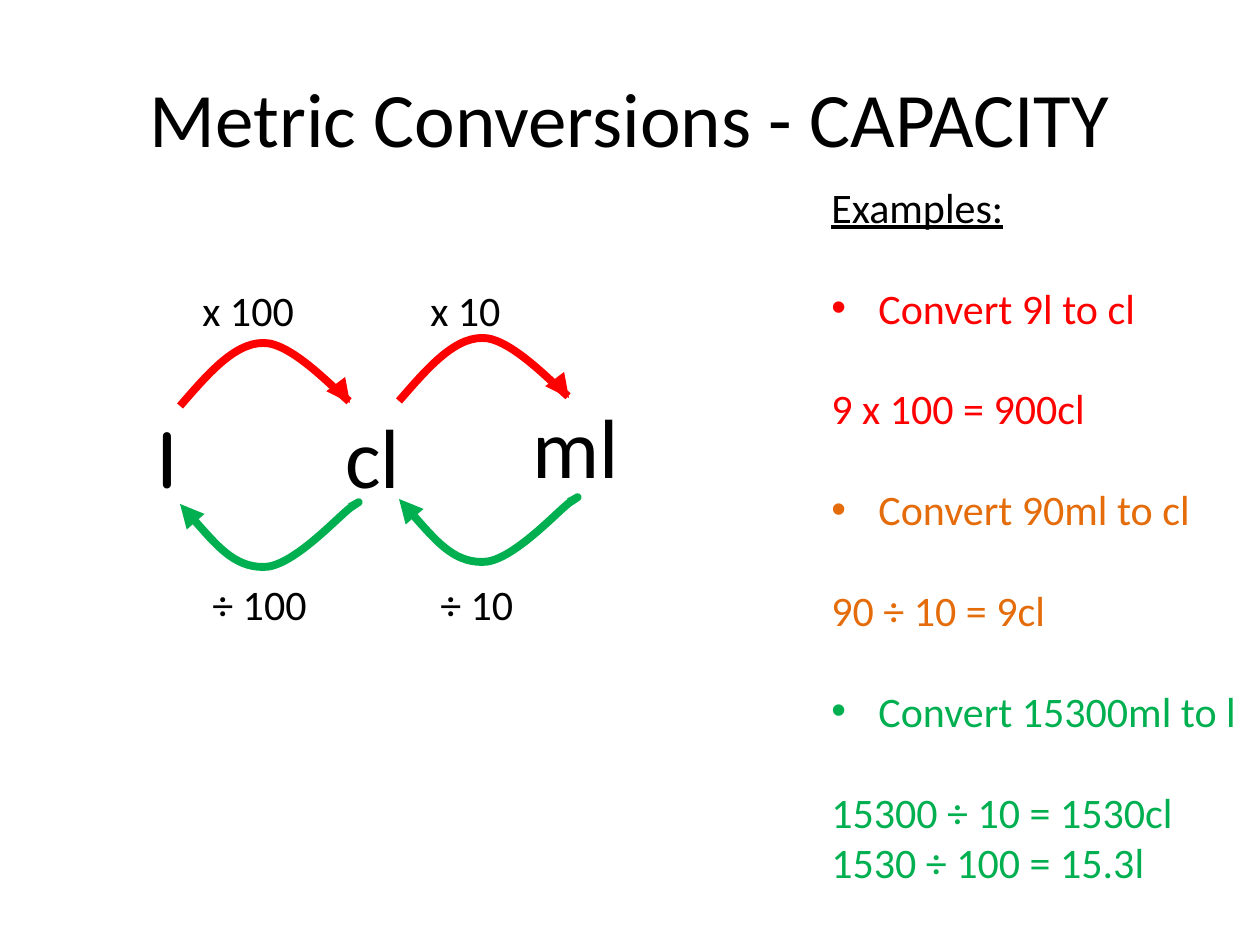
from pptx import Presentation
from pptx.dml.color import RGBColor
from pptx.enum.text import MSO_ANCHOR, PP_ALIGN
from pptx.oxml.ns import qn
from pptx.util import Pt
from lxml import etree

PX = 914400 / 126
CENTER, MIDDLE = PP_ALIGN.CENTER, MSO_ANCHOR.MIDDLE
COLORS = {"black": "000000", "red": "FF0000", "orange": "E46C0A", "green": "00B050"}

# Three joined Bezier curves, as offsets from the start of an arc
ARC = [(27, -31), (54, -63), (83, -63), (111, -64), (156, -15),
       (170, -4), (185, 6), (178, 1), (170, -3)]

EXAMPLES = [  # text, colour, bulleted, gap above
    ("Examples:", "black", False, False),
    ("Convert 9l to cl", "red", True, True),
    ("9 x 100 = 900cl", "red", False, True),
    ("Convert 90ml to cl", "orange", True, True),
    ("90 ÷ 10 = 9cl", "orange", False, True),
    ("Convert 15300ml to l", "green", True, True),
    ("15300 ÷ 10 = 1530cl", "green", False, True),
    ("1530 ÷ 100 = 15.3l", "green", False, False),
]


def px(value):
    return round(value * PX)


def format_paragraph(paragraph, size, color="black", font_name="Calibri", bold=False):
    for run in paragraph.runs:
        run.font.size = Pt(size)
        run.font.name = font_name
        run.font.bold = bold
        run.font.color.rgb = RGBColor.from_string(COLORS[color])


def add_text(slide, box, text, size, **style):
    shape = slide.shapes.add_textbox(*map(px, box))
    text_frame = shape.text_frame
    text_frame.word_wrap = True
    text_frame.text = text
    for paragraph in text_frame.paragraphs:
        format_paragraph(paragraph, size, **style)
    return text_frame


def add_arc(slide, x, y, color, direction, arrow_end):
    """Draw a curved arrow; direction 1 arches up, -1 hangs down."""
    builder = slide.shapes.build_freeform(x, y, scale=PX)
    builder.add_line_segments([(x + dx, y + direction * dy) for dx, dy in ARC], close=False)
    shape = builder.convert_to_shape()
    shape.shadow.inherit = False
    shape.fill.background()
    shape.line.color.rgb = RGBColor.from_string(COLORS[color])
    shape.line.width = Pt(4.5)

    # Turn each three segments into one cubic curve
    outline = next(shape._element.iter(qn("a:path")))
    segments = outline.findall(qn("a:lnTo"))
    for first in range(0, len(segments), 3):
        curve = etree.SubElement(outline, qn("a:cubicBezTo"))
        for segment in segments[first:first + 3]:
            curve.append(segment[0])
            outline.remove(segment)
    line = shape.line._get_or_add_ln()
    etree.SubElement(line, qn(f"a:{arrow_end}"), type="triangle")


def add_title(slide, box):
    text_frame = add_text(slide, box, "Metric Conversions - CAPACITY", 44)
    text_frame.vertical_anchor = MIDDLE
    text_frame.paragraphs[0].alignment = CENTER


def add_conversion_diagram(slide, box):
    left, top, _, _ = box

    # Units
    for text, x, y, width, font_name in [("l", 0, 120, 139, "Comic Neue"),
                                         ("cl", 188, 120, 139, "Calibri"),
                                         ("ml", 375, 110, 179, "Calibri")]:
        add_text(slide, (left + x, top + y, width, 115), text, 48,
                 font_name=font_name, bold=text == "l")

    # Arrows and factors for each step between units
    for step, factor in enumerate(("100", "10")):
        x = left + 35 + 219 * step
        y = top - 5 * step
        add_arc(slide, x, y + 128, "red", 1, "tailEnd")
        add_arc(slide, x, y + 226, "green", -1, "headEnd")
        label_x = left + 45 + 228 * step
        add_text(slide, (label_x, top, 149, 63), f"x {factor}", 24)
        add_text(slide, (label_x + 10, top + 294, 149, 63), f"÷ {factor}", 24)


def add_examples(slide, box):
    text_frame = add_text(slide, box, "\n".join(row[0] for row in EXAMPLES), 24)
    for paragraph, (_, color, bulleted, gap) in zip(text_frame.paragraphs, EXAMPLES):
        format_paragraph(paragraph, 24, color)
        if gap:
            paragraph.space_before = Pt(28.8)
        if bulleted:
            properties = paragraph._p.get_or_add_pPr()
            properties.set("marL", str(px(47)))
            properties.set("indent", str(px(-47)))
            etree.SubElement(properties, qn("a:buFont"), typeface="Arial")
            etree.SubElement(properties, qn("a:buChar"), char="•")
    text_frame.paragraphs[0].runs[0].font.underline = True


def main():
    presentation = Presentation()
    presentation.slide_width, presentation.slide_height = px(1260), px(945)
    slide = presentation.slides.add_slide(presentation.slide_layouts[6])
    add_title(slide, (63, 38, 1134, 158))
    add_conversion_diagram(slide, (145, 278, 554, 357))
    add_examples(slide, (819, 175, 432, 726))
    presentation.save("out.pptx")


if __name__ == "__main__":
    main()
